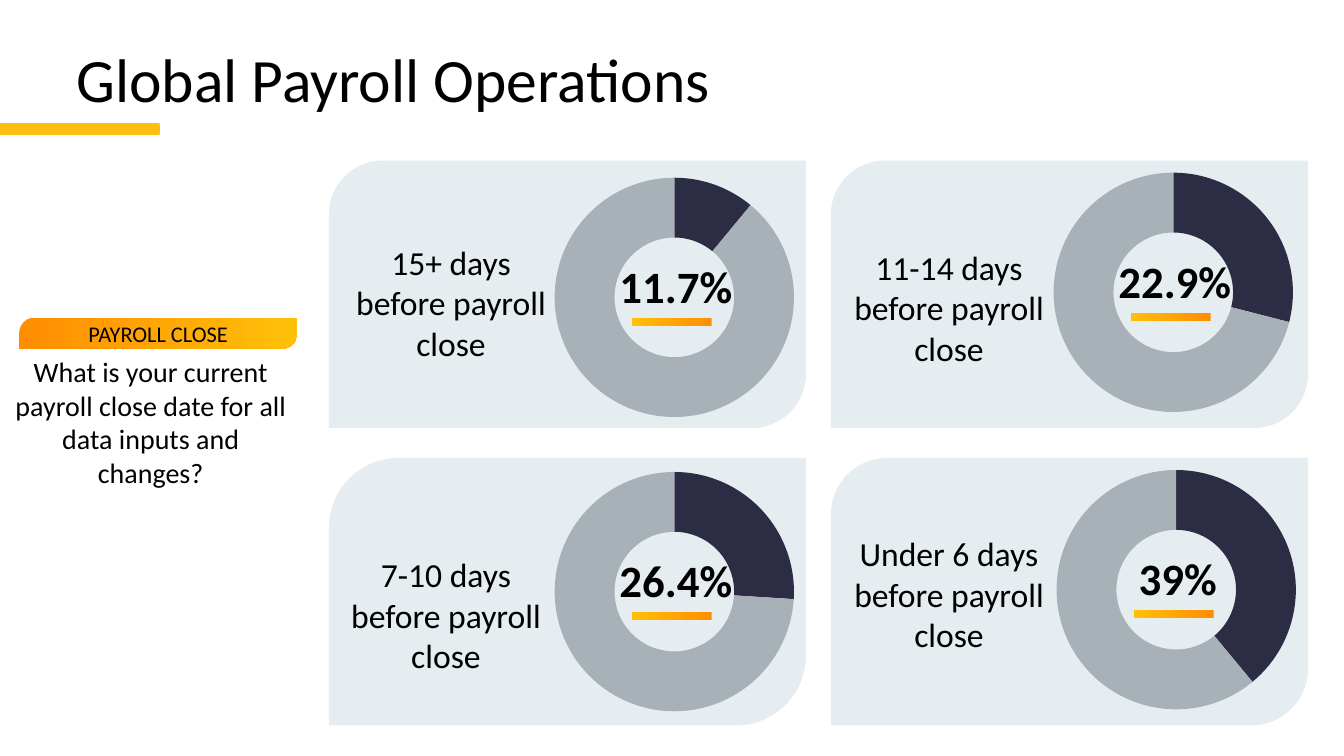
import pptx
import pptx.chart.data
import pptx.dml.color
import pptx.enum.chart
import pptx.enum.shapes
import pptx.enum.text
import pptx.oxml
import pptx.oxml.ns
import pptx.util

Pt = pptx.util.Pt
RGB = pptx.dml.color.RGBColor
SHAPE = pptx.enum.shapes.MSO_SHAPE
ALIGN = pptx.enum.text.PP_ALIGN
ANCHOR = pptx.enum.text.MSO_ANCHOR

BLACK = RGB(0x00, 0x00, 0x00)
YELLOW = RGB(0xFE, 0xBD, 0x11)
ORANGE = RGB(0xFF, 0x8D, 0x02)
AMBER = RGB(0xFF, 0xC0, 0x09)
PALE = RGB(0xE5, 0xED, 0xF0)
NAVY = RGB(0x2C, 0x2D, 0x44)
GREY = RGB(0xA7, 0xB1, 0xB7)

# Card grid and chart size, in points
CARD_X, CARD_Y = (235.4, 594), (115.2, 327.6)
CARD_W, CARD_H = 339.8, 190.1
CHART_W, RING = 246.2, 171


def write(tf, text, size=24, bold=False, align=ALIGN.CENTER,
          anchor=ANCHOR.TOP, spacing=None):
    """Fill a text frame, one paragraph per line of text."""
    tf.word_wrap = True
    tf.vertical_anchor = anchor
    for i, line in enumerate(text.split("\n")):
        p = tf.paragraphs[0] if i == 0 else tf.add_paragraph()
        p.alignment = align
        p.line_spacing = spacing
        r = p.add_run()
        r.text = line
        r.font.name = "Calibri"
        r.font.size = Pt(size)
        r.font.bold = bold
        r.font.color.rgb = BLACK


class Deck:
    def __init__(self, prs):
        self.font = "Calibri"
        self.s = prs.slides.add_slide(prs.slide_layouts[6])

    def text(self, x, y, w, h, text, **fmt):
        sp = self.s.shapes.add_textbox(Pt(x), Pt(y), Pt(w), Pt(h))
        write(sp.text_frame, text, **fmt)

    def shape(self, kind, x, y, w, h, fill=None, line=None, round_by=None):
        """Draw a preset shape; without a fill colour it gets the gradient."""
        sp = self.s.shapes.add_shape(kind, Pt(x), Pt(y), Pt(w), Pt(h))
        sp.shadow.inherit = False
        if round_by is not None:
            sp.adjustments[0] = round_by
        if fill is not None:
            sp.fill.solid()
            sp.fill.fore_color.rgb = fill
        else:
            sp.fill.gradient()
            sp.fill.gradient_angle = 0
            for stop, color in zip(sp.fill.gradient_stops, (ORANGE, AMBER)):
                stop.color.rgb = color
        if line:
            sp.line.color.rgb = fill
            sp.line.width = Pt(line)
        else:
            sp.line.fill.background()
        return sp

    def ring(self, x, y, share):
        data = pptx.chart.data.CategoryChartData()
        data.categories = ["1", "2"]
        data.add_series("Series 1", (share, 100 - share))
        chart = self.s.shapes.add_chart(
            pptx.enum.chart.XL_CHART_TYPE.DOUGHNUT,
            Pt(x), Pt(y), Pt(CHART_W), Pt(CARD_H), data).chart
        chart.has_legend = False
        chart.has_title = False
        chart.font.name = self.font
        chart.font.size = Pt(10)
        chart.font.color.rgb = BLACK
        plot = chart.plots[0]
        plot.vary_by_categories = True
        for i, color in enumerate((NAVY, GREY)):
            fmt = plot.series[0].points[i].format
            fmt.fill.solid()
            fmt.fill.fore_color.rgb = color
            fmt.line.fill.background()
        # Hole size and a centred plot area
        area = chart._chartSpace.chart.plotArea
        qn = pptx.oxml.ns.qn
        area.find(".//" + qn("c:holeSize")).set("val", "75")
        for old in area.findall(qn("c:layout")):
            area.remove(old)
        w, h = RING / CHART_W, RING / CARD_H
        parts = (("x", (1 - w) / 2), ("y", (1 - h) / 2), ("w", w), ("h", h))
        area.insert(0, pptx.oxml.parse_xml(
            f'<c:layout {pptx.oxml.ns.nsdecls("c")}><c:manualLayout>'
            '<c:layoutTarget val="inner"/>'
            '<c:xMode val="edge"/><c:yMode val="edge"/>'
            + "".join(f'<c:{k} val="{v:.4f}"/>' for k, v in parts)
            + '</c:manualLayout></c:layout>'))

    def card(self, x, y, round_by, caption, caption_at, chart_at, share, label):
        self.shape(SHAPE.ROUND_2_DIAG_RECTANGLE, x, y, CARD_W, CARD_H,
                   fill=PALE, line=1, round_by=round_by)
        cx, cy = chart_at
        self.ring(cx, cy, share)
        self.text(*caption_at, 166.3, 94.3, caption)
        self.text(cx + 65.5, cy + 63.6, 117.4, 46.1, label, size=32, bold=True)
        bar = self.shape(SHAPE.RECTANGLE, cx + 92.9, cy + 109.5, 56.9, 5.8)
        bar.rotation = 180


def main():
    prs = pptx.Presentation()
    prs.slide_width, prs.slide_height = Pt(960), Pt(540)
    deck = Deck(prs)

    # Title with its accent bar
    deck.shape(SHAPE.RECTANGLE, 0, 89.3, 113, 5.8, fill=YELLOW, line=3)
    deck.text(47.5, 31, 783.4, 55.4, "Global Payroll Operations", size=44,
              align=ALIGN.LEFT, anchor=ANCHOR.MIDDLE, spacing=0.9)

    # Cards, row by row: rounding, caption, caption and chart places, values
    cards = [
        (0.2, "15+ days before payroll close",
         (239, 169.2), (358.6, 117.4), 11, "11.7%"),
        (0.2, "11-14 days before payroll close",
         (594.7, 172.8), (715, 113.8), 29, "22.9%"),
        (0.26, "7-10 days before payroll close",
         (235.4, 392.4), (358.6, 327.6), 26, "26.4%"),
        (0.21, "Under 6 days before payroll close",
         (594.7, 377.3), (717.1, 326.2), 39, "39%"),
    ]
    for i, card in enumerate(cards):
        deck.card(CARD_X[i % 2], CARD_Y[i // 2], *card)

    # Question at the left
    deck.text(2.9, 249.8, 209.5, 104.4,
              "What is your current payroll close date for all data inputs and"
              "\nchanges?", size=20)
    pill = deck.shape(SHAPE.ROUND_2_DIAG_RECTANGLE, 13.7, 226.8, 198.7, 22.3,
                      round_by=0.5)
    write(pill.text_frame, "PAYROLL CLOSE", size=16, anchor=ANCHOR.MIDDLE)

    prs.save("out.pptx")


if __name__ == "__main__":
    main()
